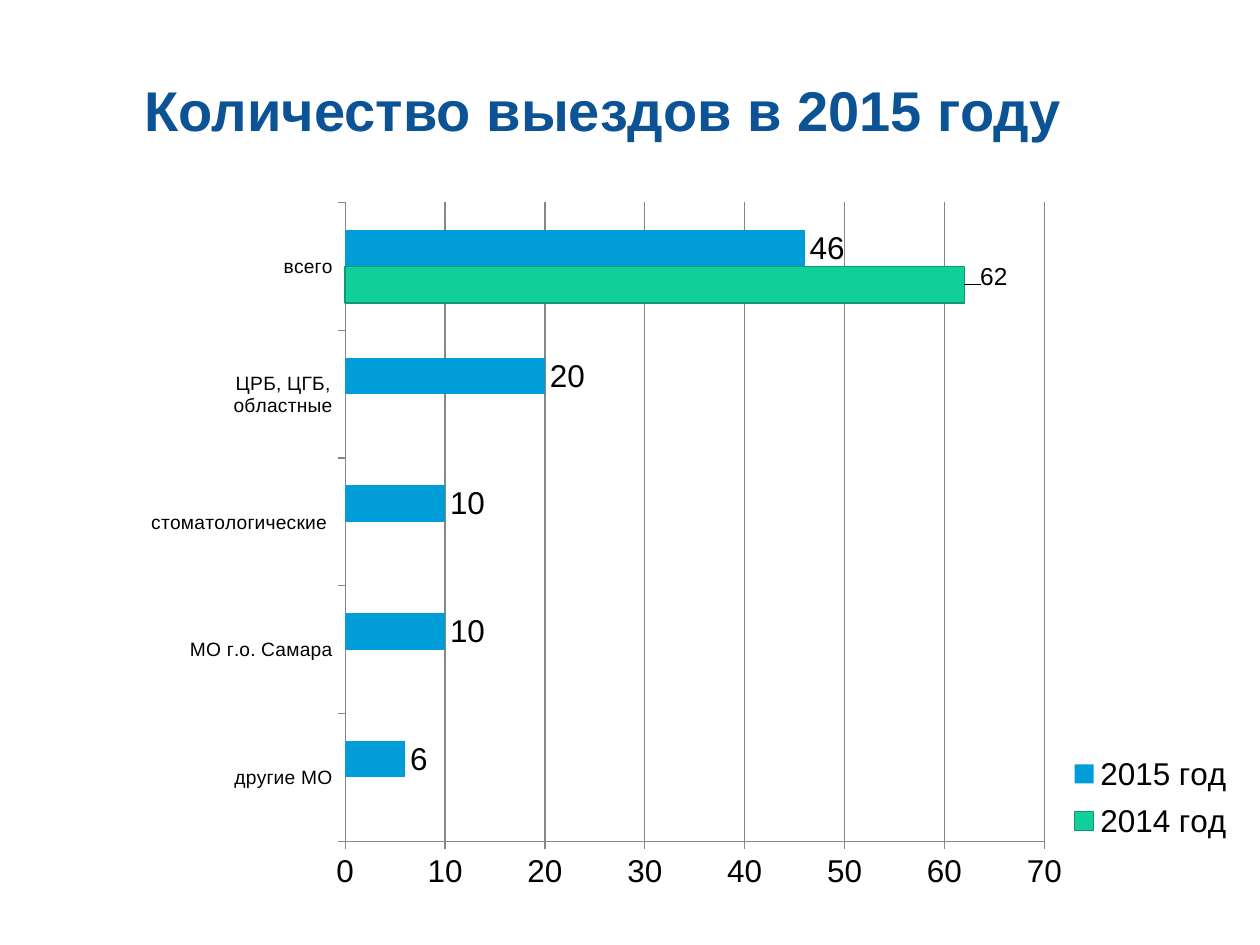
from lxml import etree
from pptx import Presentation
from pptx import util as u
from pptx.chart.data import CategoryChartData
from pptx.dml.color import RGBColor
from pptx.enum import chart as ch, text as tx
from pptx.oxml.ns import qn

Pt = u.Pt
FONT = "Arial"
COLORS = {"title": "0B5394", "text": "000000", "grid": "878787",
          "2014": "10CF9B", "2014 edge": "0C9973", "2015": "009DD9"}
TRIPS = {"другие МО": (None, 6), "МО г.о. Самара": (None, 10),
         "стоматологические ": (None, 10), "ЦРБ, ЦГБ, областные": (None, 20),
         "всего": (62, 46)}


def rgb(name):
    return RGBColor.from_string(COLORS[name])


def manual_layout(**settings):
    """Chart layout element; the settings keep their schema order."""
    layout = etree.Element(qn("c:layout"))
    manual = etree.SubElement(layout, qn("c:manualLayout"))
    for tag, value in settings.items():
        etree.SubElement(manual, qn(f"c:{tag}")).set("val", str(value))
    return layout


def replace_layout(parent, layout, index):
    for old in parent.findall(qn("c:layout")):
        parent.remove(old)
    parent.insert(index, layout)


def add_title(slide, left, top, width, height):
    frame = slide.shapes.add_textbox(left, top, width, height).text_frame
    frame.word_wrap = True
    frame.vertical_anchor = tx.MSO_ANCHOR.MIDDLE
    heading = frame.paragraphs[0]
    heading.text = "Количество выездов в 2015 году"
    heading.alignment = tx.PP_ALIGN.CENTER
    heading.line_spacing = 0.9
    heading.font.name, heading.font.size, heading.font.bold = FONT, Pt(32), True
    heading.font.color.rgb = rgb("title")


def style_axes(chart):
    trips, places = chart.value_axis, chart.category_axis
    for axis in (trips, places):
        axis.major_tick_mark = ch.XL_TICK_MARK.OUTSIDE
        axis.minor_tick_mark = ch.XL_TICK_MARK.NONE
        axis.format.line.color.rgb = rgb("grid")
        axis.format.line.width = Pt(0.75)
    places.tick_labels.font.size = Pt(11)
    trips.minimum_scale, trips.maximum_scale, trips.major_unit = 0, 70, 10
    trips.has_major_gridlines = True
    trips.major_gridlines.format.line.color.rgb = rgb("grid")
    trips.major_gridlines.format.line.width = Pt(0.75)


def style_series(series, color, label_size):
    series.format.fill.solid()
    series.format.fill.fore_color.rgb = rgb(color)
    series.invert_if_negative = False
    labels = series.data_labels
    labels.show_value = True
    labels.number_format, labels.number_format_is_linked = "0", False
    labels.position = ch.XL_LABEL_POSITION.OUTSIDE_END
    labels.font.size = Pt(label_size)


def add_trips_chart(slide, left, top, width, height):
    data = CategoryChartData()
    data.categories = list(TRIPS)
    for name, values in zip(("2014 год", "2015 год"), zip(*TRIPS.values())):
        data.add_series(name, values)
    chart = slide.shapes.add_chart(ch.XL_CHART_TYPE.BAR_CLUSTERED,
                                   left, top, width, height, data).chart
    chart.has_title = False
    chart.font.name, chart.font.size = FONT, Pt(18)
    chart.font.color.rgb = rgb("text")
    plot = chart.plots[0]
    plot.gap_width, plot.overlap, plot.vary_by_categories = 150, 0, False
    style_axes(chart)

    year_2014, year_2015 = plot.series
    style_series(year_2014, "2014", 14)
    style_series(year_2015, "2015", 18)
    year_2014.format.line.color.rgb = rgb("2014 edge")
    year_2014.format.line.width = Pt(1)

    total_label = year_2014.points[len(TRIPS) - 1].data_label
    total_label.position = ch.XL_LABEL_POSITION.OUTSIDE_END
    total_label.font.size = Pt(14)
    label_xml = year_2014.data_labels._element.find(qn("c:dLbl"))
    replace_layout(label_xml, manual_layout(x=0.01, y=-0.01), 1)

    chart.has_legend = True
    chart.legend.position = ch.XL_LEGEND_POSITION.RIGHT
    chart.legend.include_in_layout = False
    replace_layout(chart.legend._element, manual_layout(
        xMode="edge", yMode="edge", x=0.84, y=0.76, w=0.16, h=0.14), 1)
    plot_area = chart._chartSpace.chart.plotArea
    replace_layout(plot_area, manual_layout(
        layoutTarget="inner", xMode="edge", yMode="edge",
        x=0.177, y=0.043, w=0.645, h=0.845), 0)


def main():
    deck = Presentation()
    deck.slide_width, deck.slide_height = Pt(720), Pt(540)
    slide = deck.slides.add_slide(deck.slide_layouts[6])
    add_trips_chart(slide, Pt(86.4), Pt(97.2), Pt(620.64), Pt(432))
    add_title(slide, Pt(38.88), Pt(21.6), Pt(612), Pt(86.4))
    deck.save("out.pptx")


if __name__ == "__main__":
    main()
